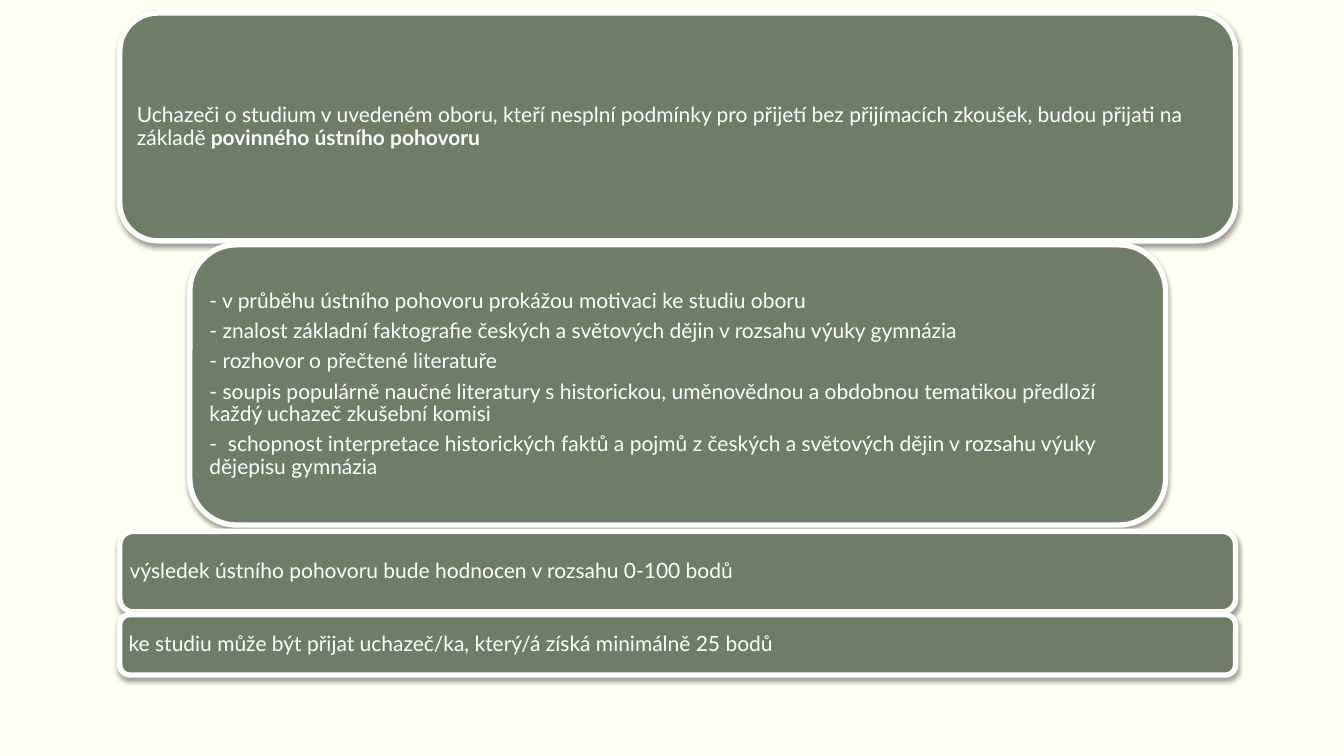
import pptx
import pptx.dml.color
import pptx.enum.shapes
import pptx.enum.text
import pptx.oxml
import pptx.util
from pptx.util import Cm

COLORS = {
    "background": "FFFFF3",
    "panel": "6D7D66",
    "outline": "FFFFFF",
    "text": "FFFFFF",
    "shadow": "000000",
}
FONT = "Lato"
WIDE, NARROW = Cm(28.12), Cm(24.59)
STACK_CENTER = Cm(17.08)

# Each panel: top, width, height, paragraphs made of (text, bold) runs
PANELS = [
    (Cm(0.33), WIDE, Cm(5.74), [
        [("Uchazeči o studium v uvedeném oboru, kteří nesplní podmínky pro přijetí "
          "bez přijímacích zkoušek, budou přijati na základě", False),
         (" povinného ústního pohovoru", True)],
    ]),
    (Cm(6.17), NARROW, Cm(7.06), [
        [("- v průběhu ústního pohovoru prokážou motivaci ke studiu oboru", False)],
        [("- znalost základní faktografie českých a světových dějin "
          "v rozsahu výuky gymnázia", False)],
        [("- rozhovor o přečtené literatuře", False)],
        [("- soupis populárně naučné literatury s historickou, uměnovědnou a obdobnou "
          "tematikou předloží každý uchazeč zkušební komisi", False)],
        [("-  schopnost interpretace historických faktů a pojmů z českých a světových "
          "dějin v rozsahu výuky dějepisu gymnázia", False)],
    ]),
    (Cm(13.39), WIDE, Cm(2.03), [
        [("výsledek ústního pohovoru bude hodnocen v rozsahu 0-100 bodů", False)],
    ]),
    (Cm(15.49), WIDE, Cm(1.52), [
        [("ke studiu může být přijat uchazeč/ka, který/á získá minimálně 25 bodů", False)],
    ]),
]


def rgb(name):
    return pptx.dml.color.RGBColor.from_string(COLORS[name])


def add_drop_shadow(shape):
    shape.shadow.inherit = False
    effects = shape._element.spPr.find(pptx.oxml.ns.qn("a:effectLst"))
    effects.append(pptx.oxml.parse_xml(
        f'<a:outerShdw {pptx.oxml.ns.nsdecls("a")} blurRad="{pptx.util.Pt(3.5)}" '
        f'dist="{pptx.util.Pt(2)}" dir="5400000" rotWithShape="0">'
        f'<a:srgbClr val="{COLORS["shadow"]}"><a:alpha val="38000"/></a:srgbClr>'
        '</a:outerShdw>'))


def fill_text(text_frame, paragraphs):
    text_frame.word_wrap = True
    text_frame.vertical_anchor = pptx.enum.text.MSO_ANCHOR.MIDDLE
    for side in ("left", "top", "right", "bottom"):
        setattr(text_frame, f"margin_{side}", Cm(0.15))
    for index, runs in enumerate(paragraphs):
        paragraph = text_frame.add_paragraph() if index else text_frame.paragraphs[0]
        paragraph.alignment = pptx.enum.text.PP_ALIGN.LEFT
        paragraph.line_spacing = 0.9
        paragraph.space_after = pptx.util.Pt(5.25)
        for text, bold in runs:
            run = paragraph.add_run()
            run.text = text
            run.font.name = FONT
            run.font.size = pptx.util.Pt(15)
            run.font.bold = bold
            run.font.color.rgb = rgb("text")


def add_panel(slide, left, top, width, height, paragraphs):
    shape = slide.shapes.add_shape(
        pptx.enum.shapes.MSO_SHAPE.ROUNDED_RECTANGLE, left, top, width, height)
    shape.fill.solid()
    shape.fill.fore_color.rgb = rgb("panel")
    shape.line.color.rgb = rgb("outline")
    shape.line.width = pptx.util.Pt(3.82)
    add_drop_shadow(shape)
    fill_text(shape.text_frame, paragraphs)


def add_panel_stack(slide, center):
    for top, width, height, paragraphs in PANELS:
        add_panel(slide, center - width // 2, top, width, height, paragraphs)


def main():
    presentation = pptx.Presentation()
    presentation.slide_width = Cm(33.87)
    presentation.slide_height = Cm(19.05)
    slide = presentation.slides.add_slide(presentation.slide_layouts[6])

    # Background
    slide.background.fill.solid()
    slide.background.fill.fore_color.rgb = rgb("background")

    # Admission conditions, stacked on a common axis
    add_panel_stack(slide, STACK_CENTER)

    presentation.save("out.pptx")


if __name__ == "__main__":
    main()
